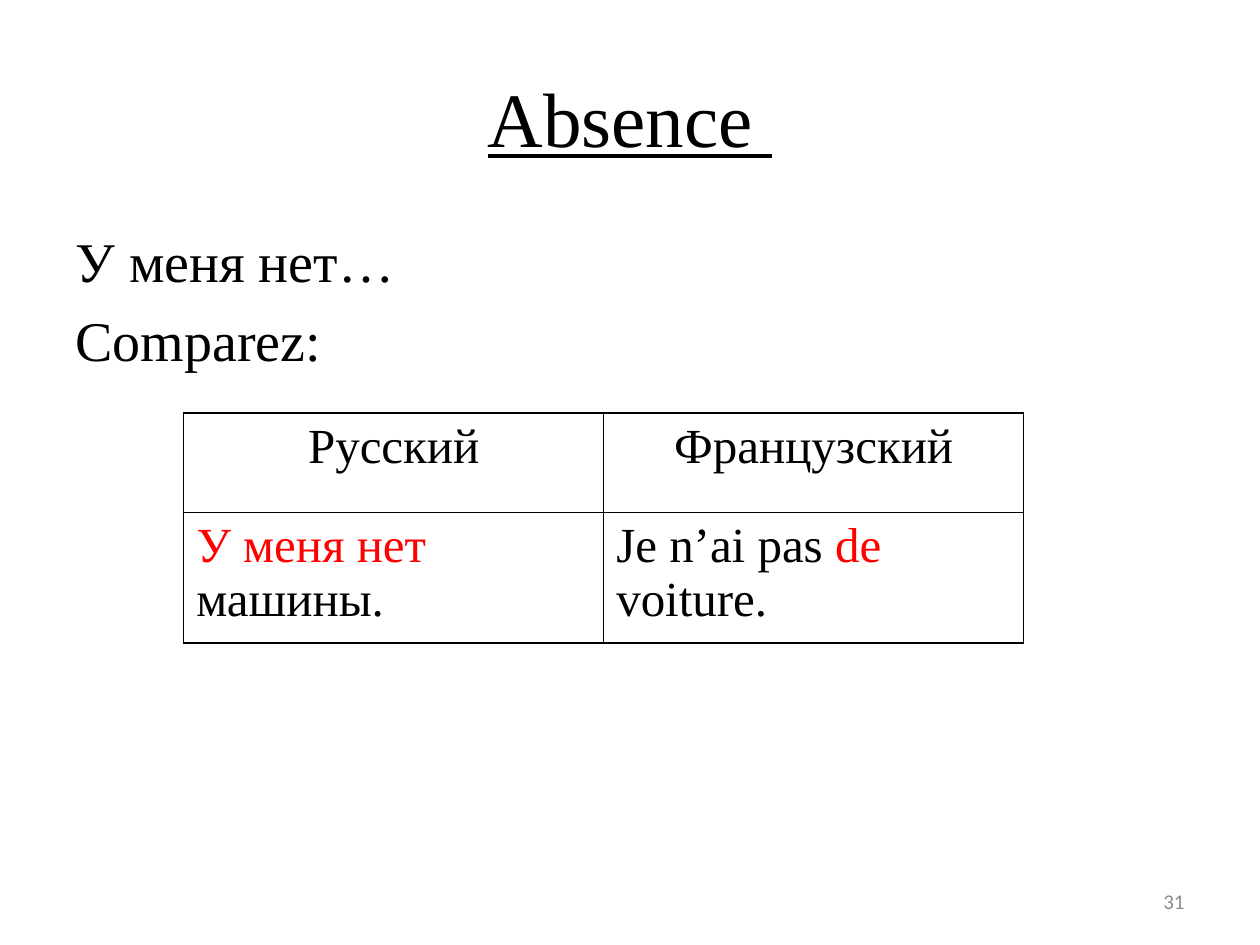
"""Build a slide comparing how absence is expressed in Russian and French."""
from lxml.etree import SubElement
from pptx import Presentation
from pptx.dml.color import RGBColor
from pptx.enum.text import MSO_ANCHOR, PP_ALIGN
from pptx.oxml.ns import qn
from pptx.util import Pt

BLACK = RGBColor(0, 0, 0)
RED = RGBColor(255, 0, 0)
GRAY = RGBColor(0x8C, 0x8C, 0x8C)


def write(paragraph, text, size=28, color=BLACK, font="Times New Roman",
          align=PP_ALIGN.LEFT, underline=None, bold=None):
    paragraph.alignment = align
    run = paragraph.add_run()
    run.text = text
    run.font.size = Pt(size)
    run.font.name = font
    run.font.color.rgb = color
    run.font.underline = underline
    run.font.bold = bold


def add_frame(left, top, width, height, anchor):
    frame = slide.shapes.add_textbox(Pt(left), Pt(top), Pt(width), Pt(height)).text_frame
    frame.word_wrap = True
    frame.vertical_anchor = anchor
    return frame


presentation = Presentation()
presentation.slide_width = Pt(720)
presentation.slide_height = Pt(540)
slide = presentation.slides.add_slide(presentation.slide_layouts[6])

heading = add_frame(36, 21.6, 648, 90, MSO_ANCHOR.MIDDLE).paragraphs[0]
write(heading, "Absence", size=44, align=PP_ALIGN.CENTER, underline=True)
write(heading, " ", size=44, align=PP_ALIGN.CENTER, underline=True, bold=True)

intro = add_frame(36, 126, 648, 356.4, MSO_ANCHOR.TOP)
for index, line in enumerate(["У меня нет…", "Comparez:"]):
    paragraph = intro.add_paragraph() if index else intro.paragraphs[0]
    paragraph.space_before = Pt(6.4)
    write(paragraph, line, size=32)

page_number = add_frame(516, 500.5, 168, 28.75, MSO_ANCHOR.MIDDLE).paragraphs[0]
write(page_number, "31", size=12, color=GRAY, font="Calibri", align=PP_ALIGN.RIGHT)

comparison_rows = [
    (PP_ALIGN.CENTER, 57, [[("Русский", BLACK)], [("Французский", BLACK)]]),
    (PP_ALIGN.LEFT, 69, [
        [("У меня нет ", RED), ("машины.", BLACK)],
        [("Je n’ai pas ", BLACK), ("de", RED), (" voiture.", BLACK)],
    ]),
]
comparison = slide.shapes.add_table(2, 2, Pt(105), Pt(236), Pt(480), Pt(126)).table
comparison.first_row = False
comparison.horz_banding = False
for row, (align, height, phrases) in enumerate(comparison_rows):
    comparison.rows[row].height = Pt(height)
    for column, phrase in enumerate(phrases):
        cell = comparison.cell(row, column)
        for text, color in phrase:
            write(cell.text_frame.paragraphs[0], text, color=color, align=align)
        properties = cell._tc.get_or_add_tcPr()
        for side in ("a:lnL", "a:lnR", "a:lnT", "a:lnB"):
            border = SubElement(properties, qn(side), w=str(Pt(1)))
            border_fill = SubElement(border, qn("a:solidFill"))
            SubElement(border_fill, qn("a:srgbClr"), val=str(BLACK))
        cell.fill.background()

presentation.save("out.pptx")
